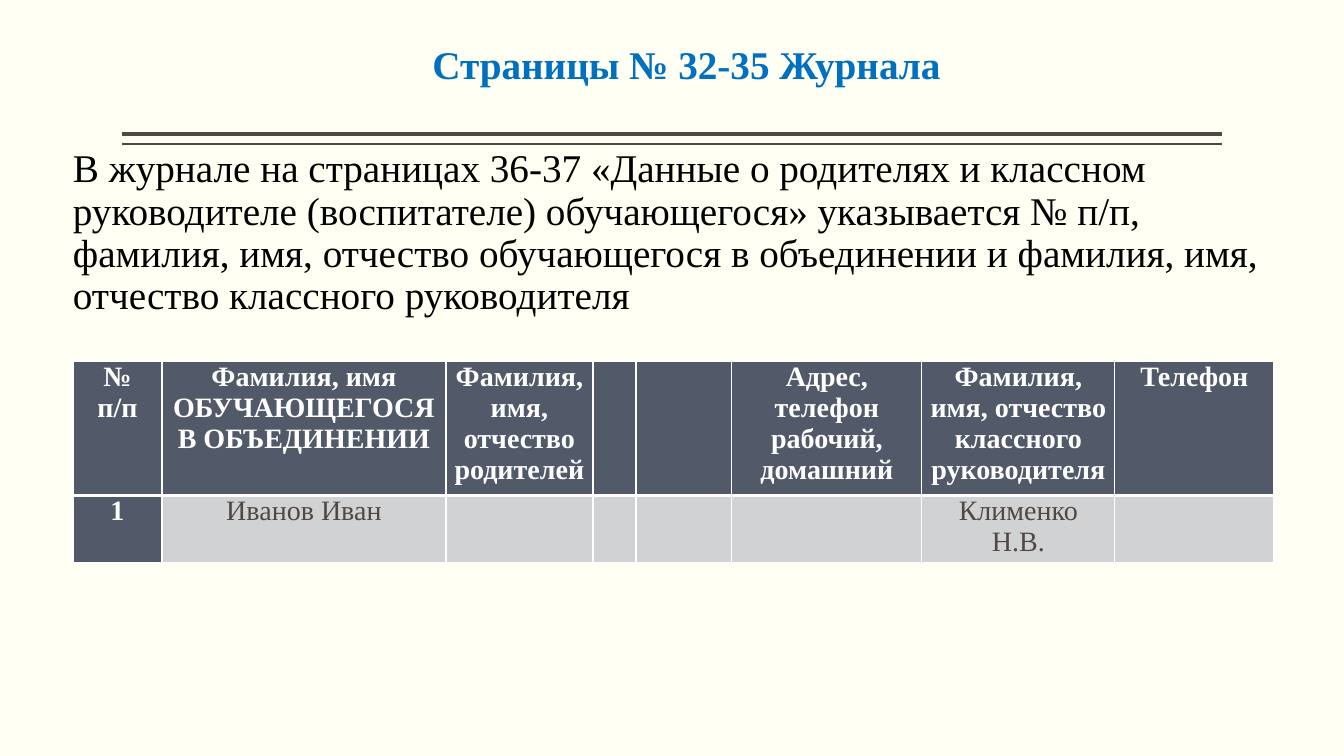
from dataclasses import dataclass

from lxml.etree import SubElement
from pptx import Presentation
from pptx.dml.color import RGBColor
from pptx.enum.shapes import MSO_CONNECTOR
from pptx.enum.text import MSO_ANCHOR, PP_ALIGN
from pptx.oxml.ns import qn
from pptx.util import Emu, Pt

PX = 914400 / 100.8


@dataclass(frozen=True)
class Theme:
    font: str = "Times New Roman"
    background: str = "FFFFF3"
    title: str = "0070C0"
    body: str = "000000"
    rule: str = "514843"
    header_fill: str = "525A6A"
    header_text: str = "FFFFFF"
    cell_fill: str = "D1D2D4"
    cell_text: str = "514843"
    border: str = "FFFFFF"
    large: int = 28
    small: int = 20


def px(length):
    return Emu(round(length * PX))


class SlideBuilder:
    """Draws styled elements on the current slide."""

    def __init__(self, deck, theme):
        self.theme = theme
        self.page = deck.slides.add_slide(deck.slide_layouts[6])
        fill = self.page.background.fill
        fill.solid()
        fill.fore_color.rgb = RGBColor.from_string(theme.background)

    def add_span(self, para, text, size, color, bold=False):
        span = para.add_run()
        span.text = text
        span.font.name = self.theme.font
        span.font.size = Pt(size)
        span.font.bold = bold
        span.font.color.rgb = RGBColor.from_string(color)

    def rule(self, left, right, top, weight):
        line = self.page.shapes.add_connector(
            MSO_CONNECTOR.STRAIGHT, px(left), px(top), px(right), px(top))
        line.line.color.rgb = RGBColor.from_string(self.theme.rule)
        line.line.width = Pt(weight)
        SubElement(line._element.spPr, qn("a:effectLst"))

    def text(self, bounds, text, color, bold=False, align=PP_ALIGN.LEFT,
             anchor=MSO_ANCHOR.TOP, before=0):
        box = self.page.shapes.add_textbox(*map(px, bounds))
        frame = box.text_frame
        frame.word_wrap = True
        frame.vertical_anchor = anchor
        frame.margin_left = frame.margin_right = 0
        frame.margin_top = frame.margin_bottom = px(5)
        para = frame.paragraphs[0]
        para.alignment = align
        para.line_spacing = 0.9
        para.space_before = Pt(before)
        self.add_span(para, text, self.theme.large, color, bold)

    def border(self, cell, side, weight):
        properties = cell._tc.get_or_add_tcPr()
        line = SubElement(properties, qn(f"a:ln{side}"), w=str(Pt(weight)))
        fill = SubElement(line, qn("a:solidFill"))
        SubElement(fill, qn("a:srgbClr"), val=self.theme.border)

    def cell(self, cell, text, is_header, weights):
        theme = self.theme
        for side, weight in weights.items():
            self.border(cell, side, weight)
        cell.fill.solid()
        cell.fill.fore_color.rgb = RGBColor.from_string(
            theme.header_fill if is_header else theme.cell_fill)
        cell.margin_left = cell.margin_right = px(7)
        cell.margin_top = cell.margin_bottom = 0
        if text:
            para = cell.text_frame.paragraphs[0]
            para.alignment = PP_ALIGN.CENTER
            para.space_after = Pt(12)
            color = theme.header_text if is_header else theme.cell_text
            self.add_span(para, text, theme.small, color, is_header)

    def table(self, left, top, widths, heights, rows):
        table = self.page.shapes.add_table(
            len(rows), len(widths), px(left), px(top),
            px(sum(widths)), px(sum(heights))).table
        for column, width in zip(table.columns, widths):
            column.width = px(width)
        for row, height in zip(table.rows, heights):
            row.height = px(height)
        for y, row in enumerate(rows):
            weights = {"L": 1, "R": 1, "T": 3 if y == 1 else 1, "B": 3 if y == 0 else 1}
            for x, text in enumerate(row):
                self.cell(table.cell(y, x), text, x == 0 or y == 0, weights)


def main():
    deck = Presentation()
    deck.slide_width, deck.slide_height = px(1344), px(756)
    theme = Theme()
    page = SlideBuilder(deck, theme)

    page.rule(122, 1222, 134, 3)
    page.rule(122, 1222, 144, 1)
    page.text((73, 18, 1227, 75), "Страницы № 32-35 Журнала", theme.title,
              bold=True, align=PP_ALIGN.CENTER, anchor=MSO_ANCHOR.BOTTOM)
    page.text((73, 144, 1227, 634),
              "В журнале на страницах 36-37 «Данные о родителях и классном "
              "руководителе (воспитателе) обучающегося» указывается № п/п, "
              "фамилия, имя, отчество обучающегося в объединении и фамилия, "
              "имя, отчество классного руководителя", theme.body, before=18)
    page.table(
        73, 361, [89, 284, 147, 43, 96, 190, 193, 159], [124, 62],
        [["№ п/п", "Фамилия, имя ОБУЧАЮЩЕГОСЯ В ОБЪЕДИНЕНИИ",
          "Фамилия, имя, отчество родителей", "", "",
          "Адрес, телефон рабочий, домашний",
          "Фамилия, имя, отчество классного руководителя", "Телефон"],
         ["1", "Иванов Иван", "", "", "", "", "Клименко Н.В.", ""]])
    deck.save("out.pptx")


if __name__ == "__main__":
    main()
